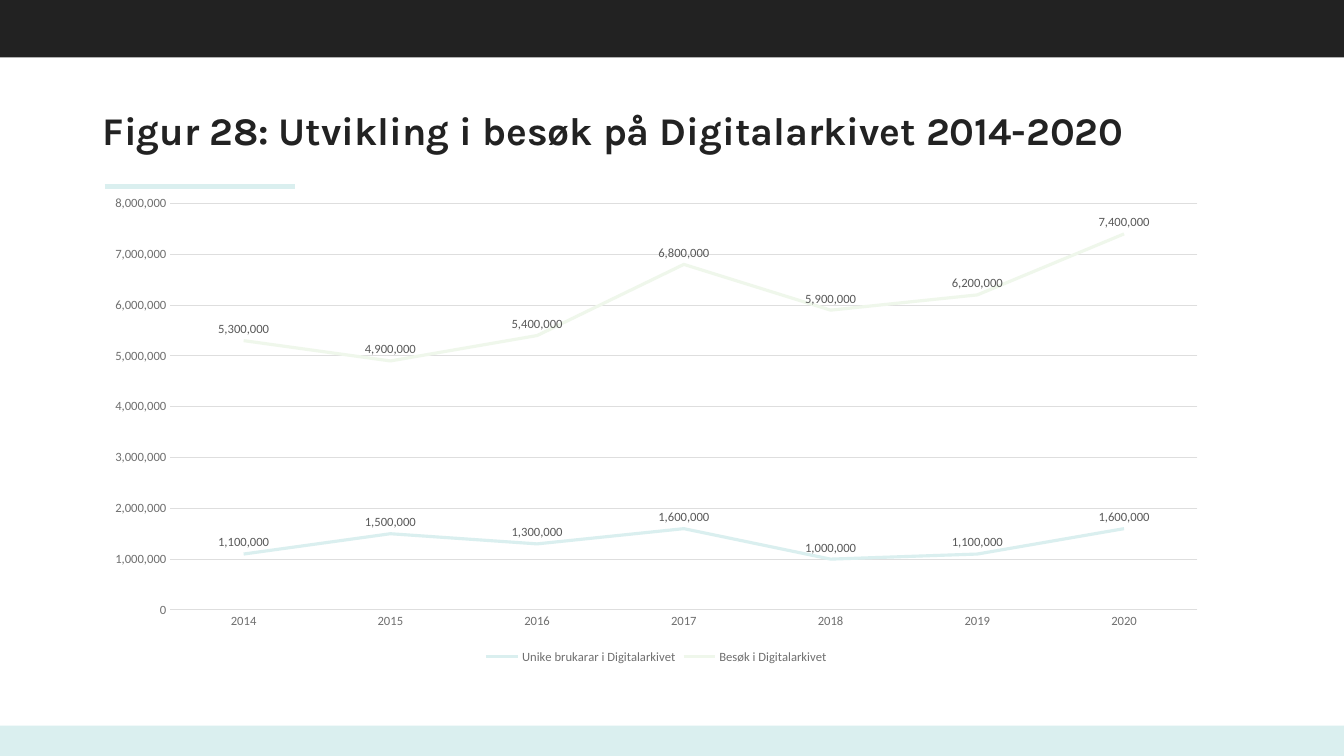
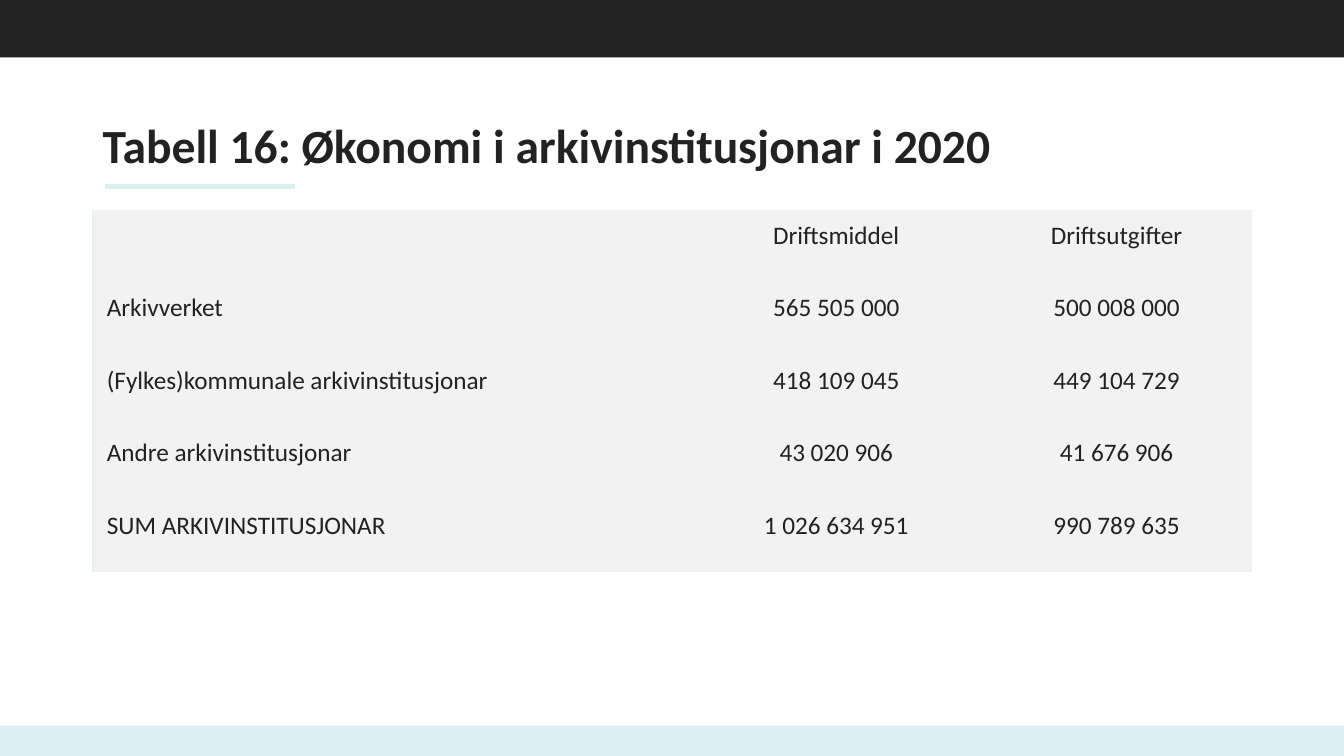
import pptx
import pptx.chart.data
import pptx.dml.color
import pptx.enum.chart
import pptx.enum.shapes
import pptx.enum.text
import pptx.oxml
import pptx.oxml.ns
import pptx.util
from pptx.util import Inches

COLORS = {"ink": "222222", "aqua": "DAEFEF", "mint": "EFF7EB", "grid": "DEDEDE",
          "axis": "6F6F6F", "label": "595959", "cell": "F2F2F2"}
RGB = {name: pptx.dml.color.RGBColor.from_string(value) for name, value in COLORS.items()}
BODY_FONT = "Calibri"

prs = pptx.Presentation()
prs.slide_width, prs.slide_height = Inches(13.33), Inches(7.5)


def style(font, name, size, color, bold=False):
    font.name, font.size, font.bold = name, pptx.util.Pt(size), bold
    font.color.rgb = RGB[color]


def new_slide(title, font_name, size, middle):
    """Add a slide with the shared bands, accent line and a title centred on middle."""
    s = prs.slides.add_slide(prs.slide_layouts[6])
    for top, height, color in ((7.2, 0.3, "aqua"), (0, 0.57, "ink")):
        sp = s.shapes.add_shape(pptx.enum.shapes.MSO_SHAPE.RECTANGLE,
                                0, Inches(top), prs.slide_width, Inches(height))
        sp.shadow.inherit = False
        sp.fill.solid()
        sp.fill.fore_color.rgb = RGB[color]
        sp.line.fill.background()

    line = s.shapes.add_connector(pptx.enum.shapes.MSO_CONNECTOR.STRAIGHT,
                                  Inches(1.04), Inches(1.85), Inches(2.93), Inches(1.85))
    line.line.color.rgb = RGB["aqua"]
    line.line.width = pptx.util.Pt(3)
    line._element.spPr.append(pptx.oxml.xmlchemy.OxmlElement("a:effectLst"))

    sp = s.shapes.add_textbox(Inches(0.92), Inches(middle - 0.4), Inches(11.5), Inches(0.8))
    tf = sp.text_frame
    tf.word_wrap = True
    tf.vertical_anchor = pptx.enum.text.MSO_ANCHOR.MIDDLE
    p = tf.paragraphs[0]
    p.text = title
    p.line_spacing = 0.9
    style(p.font, font_name, size, "ink", bold=True)
    return s


# Slide 1: line chart of visits
s = new_slide("Figur 28: Utvikling i besøk på Digitalarkivet 2014-2020", "Karla", 28, 1.32)

data = pptx.chart.data.CategoryChartData(number_format="#,##0")
data.categories = [str(year) for year in range(2014, 2021)]
data.add_series("Unike brukarar i Digitalarkivet",
                (1100000, 1500000, 1300000, 1600000, 1000000, 1100000, 1600000))
data.add_series("Besøk i Digitalarkivet",
                (5300000, 4900000, 5400000, 6800000, 5900000, 6200000, 7400000))
chart = s.shapes.add_chart(pptx.enum.chart.XL_CHART_TYPE.LINE, Inches(0.92), Inches(1.85),
                           Inches(11.18), Inches(4.78), data).chart
style(chart.font, BODY_FONT, 10, "ink")
chart.has_title = False
chart.has_legend = True
chart.legend.position = pptx.enum.chart.XL_LEGEND_POSITION.BOTTOM
chart.legend.include_in_layout = False
style(chart.legend.font, BODY_FONT, 9, "axis")

# Axes and gridlines
years, visits = chart.category_axis, chart.value_axis
for axis in (years, visits):
    axis.major_tick_mark = axis.minor_tick_mark = pptx.enum.chart.XL_TICK_MARK.NONE
    style(axis.tick_labels.font, BODY_FONT, 9, "axis")
visits.minimum_scale, visits.maximum_scale, visits.major_unit = 0, 8000000, 1000000
visits.tick_labels.number_format = "#,##0"
visits.tick_labels.number_format_is_linked = False
visits.format.line.fill.background()
visits.has_major_gridlines = True
for line in (years.format.line, visits.major_gridlines.format.line):
    line.color.rgb = RGB["grid"]
    line.width = pptx.util.Pt(0.75)

# Series lines and value labels
chart.plots[0].vary_by_categories = False
for series, color in zip(chart.plots[0].series, ("aqua", "mint")):
    series.smooth = False
    series.format.line.color.rgb = RGB[color]
    series.format.line.width = pptx.util.Pt(2.25)
    labels = series.data_labels
    labels.show_value = True
    labels.position = pptx.enum.chart.XL_LABEL_POSITION.ABOVE
    style(labels.font, BODY_FONT, 9, "label")

# Slide 2: table of finances
s = new_slide("Tabell 16: Økonomi i arkivinstitusjonar i 2020", BODY_FONT, 34, 1.47)

rows = [
    ("", "Driftsmiddel", "Driftsutgifter"),
    ("Arkivverket", "565 505 000", "500 008 000"),
    ("(Fylkes)kommunale arkivinstitusjonar", "418 109 045", "449 104 729"),
    ("Andre arkivinstitusjonar", "43 020 906", "41 676 906"),
    ("SUM ARKIVINSTITUSJONAR", "1 026 634 951", "990 789 635"),
]
table = s.shapes.add_table(len(rows), 3, Inches(0.92), Inches(2.08),
                           Inches(11.5), Inches(0.72 * len(rows))).table
table.first_row = table.horz_banding = False
for column, width in zip(table.columns, (5.94, 2.73, 2.83)):
    column.width = Inches(width)

for i, row in enumerate(rows):
    for j, text in enumerate(row):
        cell = table.cell(i, j)
        cell.fill.solid()
        cell.fill.fore_color.rgb = RGB["cell"]
        cell.vertical_anchor = pptx.enum.text.MSO_ANCHOR.BOTTOM
        cell.margin_left, cell.margin_right = Inches(0.14), 0
        cell.margin_top, cell.margin_bottom = Inches(0.04), Inches(0.31)
        p = cell.text_frame.paragraphs[0]
        p.text = text
        p.alignment = pptx.enum.text.PP_ALIGN.CENTER if j else pptx.enum.text.PP_ALIGN.LEFT
        style(p.font, BODY_FONT, 18, "ink")
        # Only the table's left edge is ruled
        for k, side in enumerate("LRTB"):
            ruled = side == "L" and j == 0
            paint = (f'<a:solidFill><a:srgbClr val="{COLORS["aqua"]}"/></a:solidFill>'
                     if ruled else "<a:noFill/>")
            border = pptx.oxml.parse_xml(
                f'<a:ln{side} {pptx.oxml.ns.nsdecls("a")} w="12700">{paint}</a:ln{side}>')
            cell._tc.tcPr.insert(k, border)

prs.save("out.pptx")
